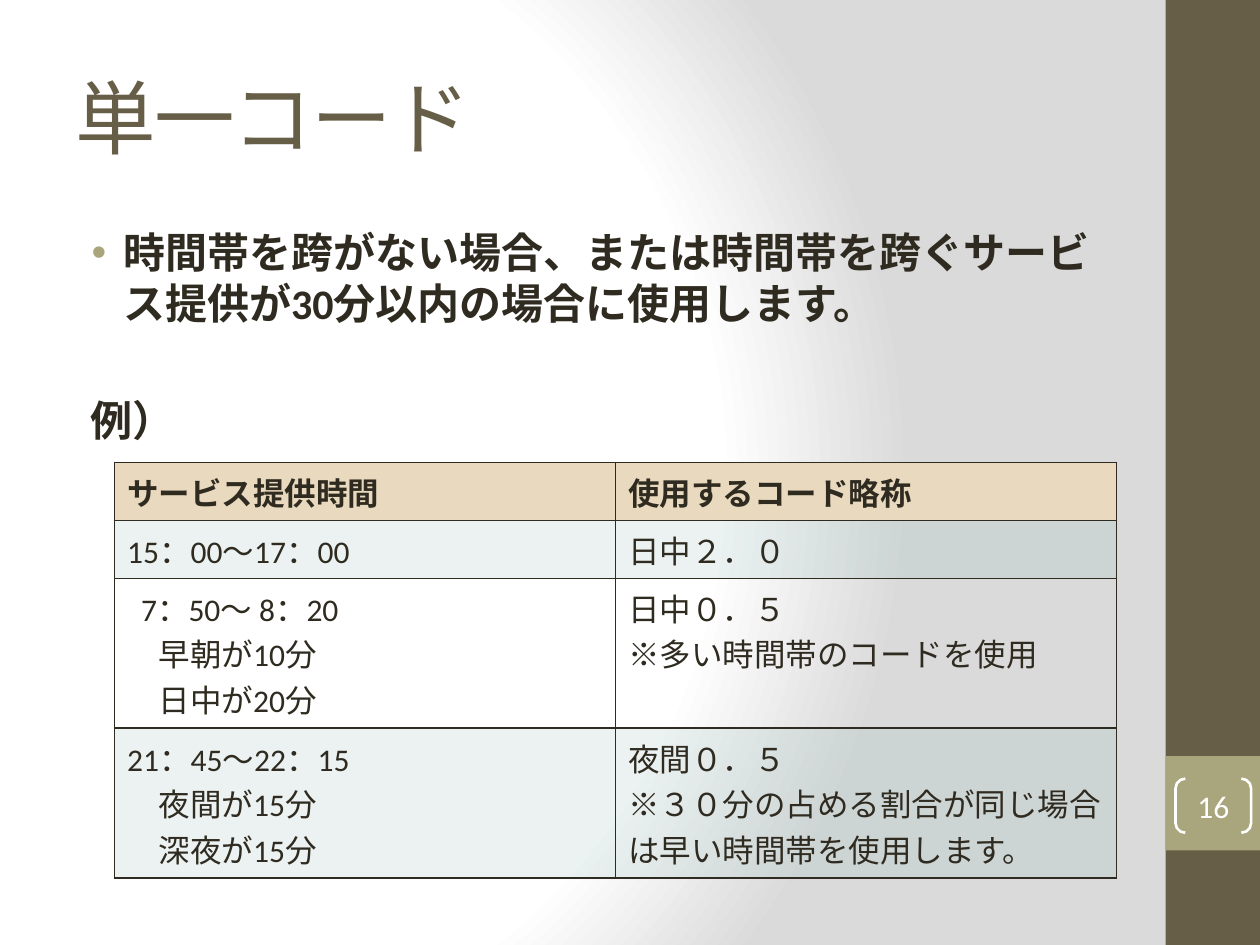
from dataclasses import dataclass

from lxml.etree import SubElement
from pptx import Presentation
from pptx.dml.color import RGBColor
from pptx.enum.lang import MSO_LANGUAGE_ID
from pptx.enum.shapes import MSO_SHAPE
from pptx.enum.text import MSO_ANCHOR, PP_ALIGN
from pptx.oxml import parse_xml
from pptx.oxml.ns import nsdecls, qn
from pptx.util import Inches, Pt

BROWN, OLIVE, INK, WHITE = "675E47", "A9A57C", "2F2B20", "FFFFFF"
SAND, TEAL = "E9D9BE", "9CBEBD"


@dataclass
class Line:
    text: str
    left: float = 0
    hang: float = 0
    before: float = 0


@dataclass
class Row:
    height: float
    cells: tuple[list[Line], list[Line]]
    fill: str | None = None
    alpha: int = 100
    bold: bool = False


@dataclass
class Block:
    top: float
    height: float
    color: str


BLOCKS = [Block(0, 7.5, BROWN), Block(6, 0.75, OLIVE)]
BODY = [
    Line("時間帯を跨がない場合、または時間帯を跨ぐサービス提供が30分以内の場合に使用します。",
         left=0.38, hang=0.25),
    Line("例）", left=0.12, before=38),
]
ROWS = [
    Row(0.46, ([Line("サービス提供時間")], [Line("使用するコード略称")]), SAND, bold=True),
    Row(0.46, ([Line("15：00～17：00")], [Line("日中２．０")]), TEAL, 20),
    Row(1.19, ([Line("7：50～ 8：20", 0.11), Line("早朝が10分", 0.25),
                Line("日中が20分", 0.25)],
               [Line("日中０．５"), Line("※多い時間帯のコードを使用")])),
    Row(1.19, ([Line("21：45～22：15"), Line("夜間が15分", 0.25),
                Line("深夜が15分", 0.25)],
               [Line("夜間０．５"),
                Line("※３０分の占める割合が同じ場合は早い時間帯を使用します。")]), TEAL, 20),
]


def rgb(color: str) -> RGBColor:
    return RGBColor.from_string(color)


def style(para, size: float, color: str, face: str = "Calibri", bold: bool = False) -> None:
    font = para.font
    font.name, font.size, font.bold = face, Pt(size), bold
    font.color.rgb = rgb(color)
    font.language_id = MSO_LANGUAGE_ID.JAPANESE


def write(frame, lines: list[Line], size: float, bold: bool) -> None:
    frame.word_wrap = True
    for i, line in enumerate(lines):
        para = frame.add_paragraph() if i else frame.paragraphs[0]
        para.text = line.text
        para.space_before = Pt(line.before)
        props = para._p.get_or_add_pPr()
        props.set("marL", str(Inches(line.left)))
        props.set("indent", str(-Inches(line.hang)))
        if line.hang:
            tint = SubElement(props, qn("a:buClr"))
            SubElement(tint, qn("a:srgbClr"), val=OLIVE)
            SubElement(props, qn("a:buFont"), typeface="Arial")
            SubElement(props, qn("a:buChar"), char="•")
        style(para, size, INK, bold=bold)


def paint(slide) -> None:
    """Give the slide its circular background gradient."""
    stops = "".join(f'<a:gs pos="{pos}000"><a:srgbClr val="{color}"/></a:gs>'
                    for pos, color in ((0, WHITE), (75, WHITE), (100, "DADADA")))
    slide.element.cSld.insert(0, parse_xml(
        f'<p:bg {nsdecls("p", "a")}><p:bgPr><a:gradFill rotWithShape="1">'
        f'<a:gsLst>{stops}</a:gsLst><a:path path="circle">'
        '<a:fillToRect l="20000" t="50000" r="100000" b="50000"/></a:path>'
        '</a:gradFill><a:effectLst/></p:bgPr></p:bg>'))


def add_block(slide, block: Block) -> None:
    shape = slide.shapes.add_shape(MSO_SHAPE.RECTANGLE, Inches(9.25), Inches(block.top),
                                   Inches(0.75), Inches(block.height))
    shape.shadow.inherit = False
    shape.fill.solid()
    shape.fill.fore_color.rgb = rgb(block.color)
    shape.line.fill.background()


def add_title(slide) -> None:
    title = slide.shapes.title
    title.left, title.top = Inches(0.5), Inches(0.3)
    title.width, title.height = Inches(8.33), Inches(1.25)
    frame = title.text_frame
    frame.text = "単一コード"
    frame.vertical_anchor = MSO_ANCHOR.MIDDLE
    para = frame.paragraphs[0]
    para.alignment = PP_ALIGN.LEFT
    style(para, 46, BROWN, "Cambria")
    para._p.pPr.find(qn("a:defRPr")).set("spc", "-100")


def edge(cell) -> None:
    """Rule all four sides of a cell."""
    props = cell._tc.get_or_add_tcPr()
    for i, side in enumerate("LRTB"):
        props.insert(i, parse_xml(
            f'<a:ln{side} {nsdecls("a")} w="{Pt(1)}"><a:solidFill>'
            f'<a:srgbClr val="{INK}"/></a:solidFill></a:ln{side}>'))


def add_grid(slide) -> None:
    total = sum(row.height for row in ROWS)
    table = slide.shapes.add_table(len(ROWS), 2, Inches(0.91), Inches(3.67),
                                   Inches(7.95), Inches(total)).table
    table.first_row = table.horz_banding = False
    grid = "{5940675A-B579-460E-94D1-54222C63F5DA}"
    table._tbl.tblPr.find(qn("a:tableStyleId")).text = grid
    for i, row in enumerate(ROWS):
        table.rows[i].height = Inches(row.height)
        for j, lines in enumerate(row.cells):
            cell = table.cell(i, j)
            write(cell.text_frame, lines, 18, row.bold)
            if row.fill:
                cell.fill.solid()
                cell.fill.fore_color.rgb = rgb(row.fill)
                if row.alpha < 100:
                    tint = cell._tc.tcPr.find(".//" + qn("a:srgbClr"))
                    SubElement(tint, qn("a:alpha"), val=f"{row.alpha}000")
            else:
                cell.fill.background()
            edge(cell)


def add_number(slide) -> None:
    shape = slide.shapes.add_shape(MSO_SHAPE.DOUBLE_BRACKET, Inches(9.33), Inches(6.18),
                                   Inches(0.6), Inches(0.43))
    shape.adjustments[0] = 0.18
    shape.shadow.inherit = False
    shape.fill.background()
    shape.line.color.rgb = rgb(WHITE)
    shape.line.width = Pt(1.5)
    frame = shape.text_frame
    frame.margin_left = frame.margin_right = frame.margin_top = frame.margin_bottom = 0
    frame.vertical_anchor = MSO_ANCHOR.MIDDLE
    frame.text = "16"
    para = frame.paragraphs[0]
    para.alignment = PP_ALIGN.CENTER
    style(para, 18, WHITE)


def main() -> None:
    deck = Presentation()
    deck.slide_width, deck.slide_height = Inches(10), Inches(7.5)
    slide = deck.slides.add_slide(deck.slide_layouts[5])
    paint(slide)
    for block in BLOCKS:
        add_block(slide, block)
    add_title(slide)
    body = slide.shapes.add_textbox(Inches(0.5), Inches(1.75), Inches(8.33), Inches(5.25))
    write(body.text_frame, BODY, 24, True)
    add_grid(slide)
    add_number(slide)
    deck.save("out.pptx")


if __name__ == "__main__":
    main()
